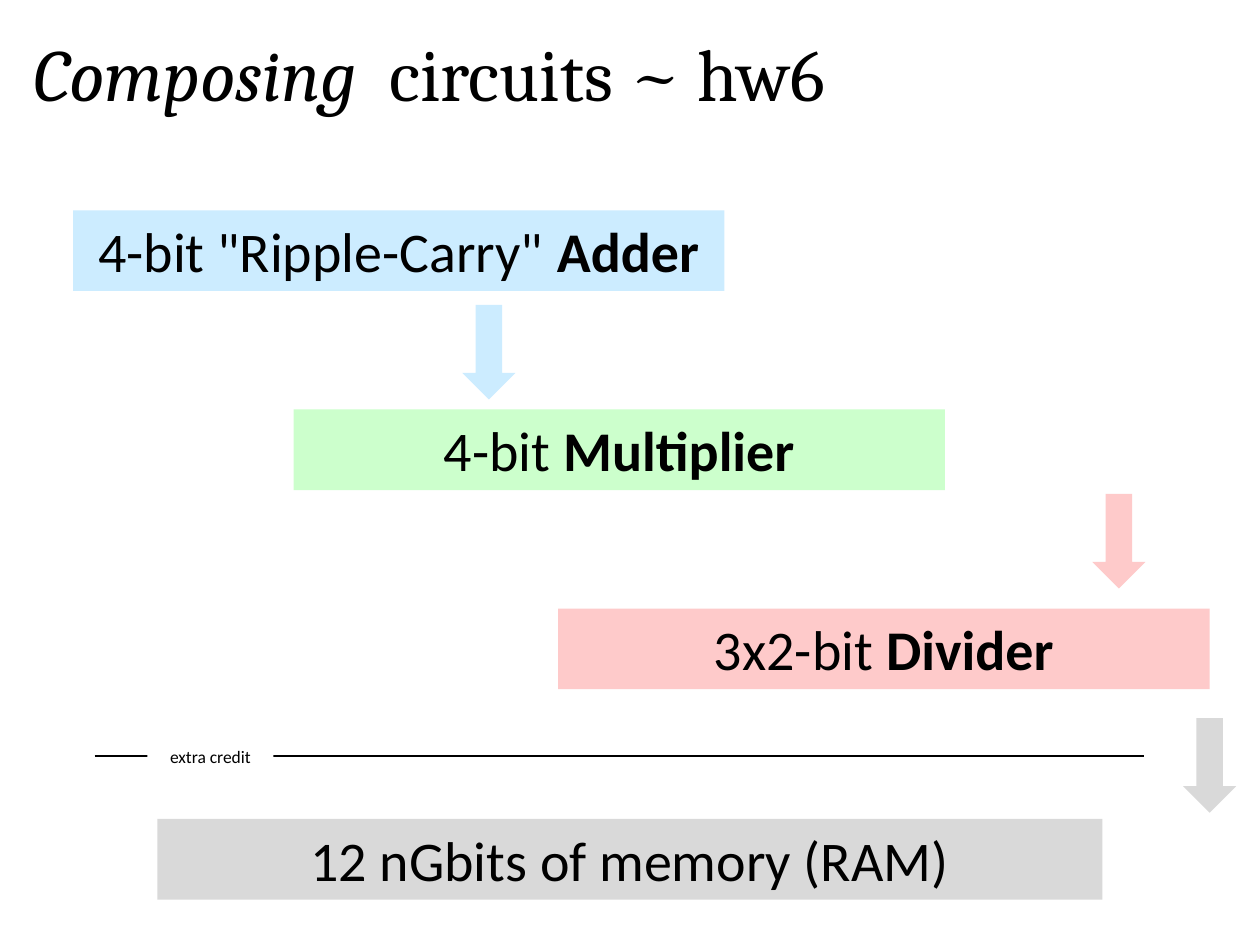
from pptx import Presentation
from pptx.dml.color import RGBColor
from pptx.enum.shapes import MSO_CONNECTOR, MSO_SHAPE
from pptx.enum.text import MSO_ANCHOR, PP_ALIGN
from pptx.oxml.ns import qn
from pptx.util import Inches, Pt
from lxml.etree import SubElement

BLACK = RGBColor(0x00, 0x00, 0x00)
WHITE = RGBColor(0xFF, 0xFF, 0xFF)
BLUE = RGBColor(0xCC, 0xEC, 0xFF)
GREEN = RGBColor(0xCC, 0xFF, 0xCC)
PINK = RGBColor(0xFE, 0xCA, 0xCA)
GRAY = RGBColor(0xD9, 0xD9, 0xD9)


class Deck:
    head = "Cambria"
    body = "Calibri"
    ink = BLACK

    def __init__(self):
        self.prs = Presentation()
        self.prs.slide_width = Inches(10)
        self.prs.slide_height = Inches(7.5)
        self.slide = self.prs.slides.add_slide(self.prs.slide_layouts[6])

    def label(self, shape, runs, size, font, align):
        """Fill a shape with one paragraph of (text, bold, italic) runs."""
        frame = shape.text_frame
        frame.word_wrap = True
        frame.vertical_anchor = MSO_ANCHOR.TOP
        para = frame.paragraphs[0]
        para.alignment = align
        for text, bold, italic in runs:
            run = para.add_run()
            run.text = text
            run.font.name = font
            run.font.size = Pt(size)
            run.font.bold = bold
            run.font.italic = italic
            run.font.color.rgb = self.ink

    def title(self, slant, plain):
        box = self.slide.shapes.add_textbox(
            Inches(0.17), Inches(0.17), Inches(8.5), Inches(0.8))
        runs = [(slant, False, True), (plain, False, False)]
        self.label(box, runs, 42, self.head, PP_ALIGN.LEFT)

    def shape(self, kind, left, top, width, height, fill):
        shape = self.slide.shapes.add_shape(
            kind, Inches(left), Inches(top), Inches(width), Inches(height))
        shape.shadow.inherit = False
        shape.fill.solid()
        shape.fill.fore_color.rgb = fill
        shape.line.fill.background()
        return shape

    def box(self, left, top, width, fill, plain, strong="", size=32, height=0.64):
        box = self.shape(MSO_SHAPE.RECTANGLE, left, top, width, height, fill)
        runs = [(plain, False, False)]
        if strong:
            runs.append((strong, True, False))
        self.label(box, runs, size, self.body, PP_ALIGN.CENTER)

    def arrow(self, left, top, fill):
        self.shape(MSO_SHAPE.DOWN_ARROW, left, top, 0.42, 0.75, fill)

    def rule(self, left, right, top):
        line = self.slide.shapes.add_connector(
            MSO_CONNECTOR.STRAIGHT,
            Inches(left), Inches(top), Inches(right), Inches(top))
        line.line.color.rgb = self.ink
        line.line.width = Pt(1.5)
        SubElement(line._element.spPr, qn("a:effectLst"))


def main():
    deck = Deck()
    deck.title("Composing  ", "circuits ~ hw6")

    steps = [
        (0.58, BLUE, '4-bit "Ripple-Carry" ', "Adder"),
        (2.33, GREEN, "4-bit ", "Multiplier"),
        (4.43, PINK, "3x2-bit ", "Divider"),
    ]
    for row, (left, fill, plain, strong) in enumerate(steps):
        deck.box(left, 1.67 + 1.58 * row, 5.17, fill, plain, strong)
    deck.box(1.25, 6.5, 7.5, GRAY, "12 nGbits of memory (RAM)")

    for left, top, fill in [(3.67, 2.42, BLUE), (8.67, 3.92, PINK),
                            (9.39, 5.7, GRAY)]:
        deck.arrow(left, top, fill)

    deck.rule(0.75, 9.08, 6)
    deck.box(1.17, 5.87, 1, WHITE, "extra credit", size=10, height=0.27)
    deck.prs.save("out.pptx")


if __name__ == "__main__":
    main()
